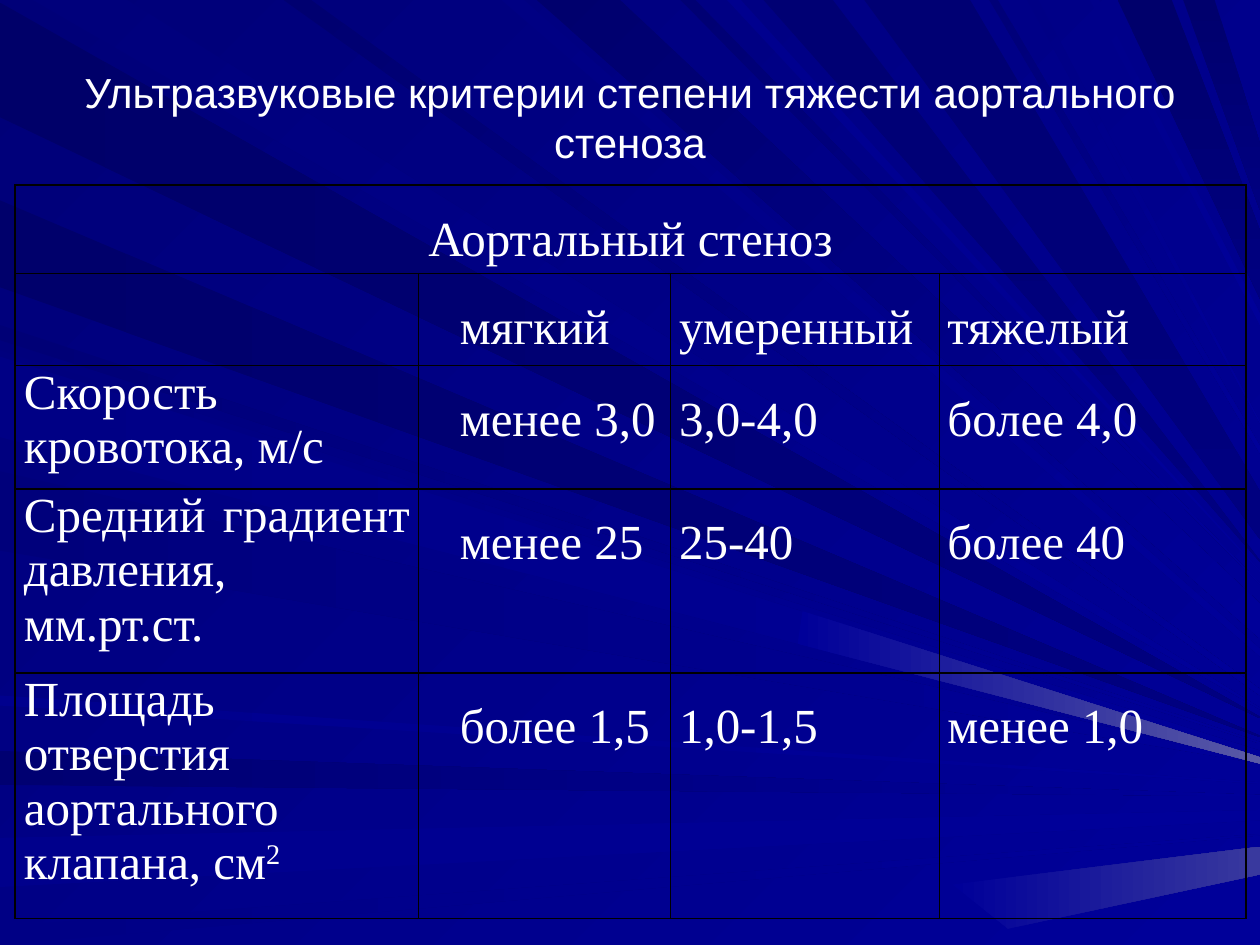
import pptx
import pptx.dml.color
import pptx.enum.text
import pptx.oxml
import pptx.oxml.ns
import pptx.util

ALIGN = pptx.enum.text.PP_ALIGN
GRID = 1000
DEEP, BRIGHT = "000080", "000099"


def color(value):
    return pptx.dml.color.RGBColor.from_string(value)


class Deck:
    title_font, body_font = "Arial", "Times New Roman"
    text, line = "FFFFFF", "000000"
    title_size, body_size = 24, 28

    def __init__(self):
        self.prs = pptx.Presentation()
        self.prs.slide_width = pptx.util.Inches(10)
        self.prs.slide_height = pptx.util.Inches(7.5)
        self.s = self.prs.slides.add_slide(self.prs.slide_layouts[6])
        self.unit = self.prs.slide_width // GRID

    def box(self, *lengths):
        return [pptx.util.Emu(n * self.unit) for n in lengths]

    def paint(self, fill, start, end, angle):
        fill.gradient()
        fill.gradient_angle = 360 - angle
        for stop, value in zip(fill.gradient_stops, (start, end)):
            stop.color.rgb = color(value)

    def background(self, start, end, angle):
        self.paint(self.s.background.fill, start, end, angle)

    def beam(self, points, start, end, angle=0):
        builder = self.s.shapes.build_freeform(*points[0], scale=self.unit)
        builder.add_line_segments(points[1:], close=True)
        sp = builder.convert_to_shape()
        sp.shadow.inherit = False
        sp.line.fill.background()
        self.paint(sp.fill, start, end, angle)

    def left_ray(self, top, bottom, tip, start, end=BRIGHT, spread=1):
        points = [(0, top), (0, bottom), (GRID, tip + spread), (GRID, tip)]
        self.beam(points, start, end)

    def top_ray(self, left, right, tip, start, end=BRIGHT, spread=1):
        points = [(left, 0), (right, 0), (GRID, tip), (GRID, tip + spread)]
        self.beam(points, start, end, 90 if end == DEEP else 45)

    def run(self, p, text, font, size, raised=False):
        r = p.add_run()
        r.text = text
        r.font.name = font
        r.font.size = pptx.util.Pt(size)
        r.font.color.rgb = color(self.text)
        if raised:
            r.font._element.set("baseline", "30000")

    def title(self, text, *place):
        tf = self.s.shapes.add_textbox(*self.box(*place)).text_frame
        tf.word_wrap = True
        tf.vertical_anchor = pptx.enum.text.MSO_ANCHOR.MIDDLE
        p = tf.paragraphs[0]
        p.alignment = ALIGN.CENTER
        self.run(p, text, self.title_font, self.title_size)

    def border(self, cell, side, width):
        ln = pptx.oxml.parse_xml(
            f'<a:{side} {pptx.oxml.ns.nsdecls("a")} w="{pptx.util.Pt(width)}"><a:solidFill>'
            f'<a:srgbClr val="{self.line}"/></a:solidFill></a:{side}>')
        cell._tc.get_or_add_tcPr().append(ln)

    def cell(self, cell, runs, row, col):
        cell.margin_left = cell.margin_right = pptx.util.Inches(0.07)
        cell.margin_top = cell.margin_bottom = 0
        strong = {"lnL": row == 0 or col == 0, "lnR": row == 0 or col == 3,
                  "lnT": row != 2, "lnB": row != 1}
        for side, bold in strong.items():
            self.border(cell, side, 1 if bold else 0.25)
        cell.fill.background()
        p = cell.text_frame.paragraphs[0]
        p.alignment = ALIGN.JUSTIFY if row else ALIGN.CENTER
        if col or not row:
            p.line_spacing = 1.5
        if col == 1:
            p._p.get_or_add_pPr().set("indent", str(pptx.util.Inches(0.26)))
        for i, text in enumerate(runs):
            self.run(p, text, self.body_font, self.body_size, raised=i == 1)

    def table(self, rows, left, top, widths, heights):
        place = self.box(left, top, sum(widths), sum(heights))
        table = self.s.shapes.add_table(len(rows), len(widths), *place).table
        table.first_row = table.horz_banding = False
        for column, width in zip(table.columns, self.box(*widths)):
            column.width = width
        for row, height in zip(table.rows, self.box(*heights)):
            row.height = height
        table.cell(0, 0).merge(table.cell(0, len(widths) - 1))
        for i, row in enumerate(rows):
            for j, runs in enumerate(row):
                self.cell(table.cell(i, j), runs, i, j)


LEFT_RAYS = [
    (2, 93, 569, "000069", DEEP),
    (596, 623, 631, "000071"),
    (665, 704, 643, "00008C", BRIGHT, 8),
    (735, 750, 662, "000085"),
    (258, 270, 589, "000076"),
    (159, 228, 584, "00006B", DEEP),
    (278, 342, 596, "00007E", BRIGHT, 6),
    (374, 437, 605, "00007B"),
    (552, 560, 621, "00008E"),
    (283, 347, 601, "000085", BRIGHT, 5),
]

TOP_RAYS = [
    (26, 101, 562, "00007B"),
    (398, 416, 515, "000083", BRIGHT, 6),
    (426, 492, 479, "00006D", BRIGHT, 28),
    (540, 552, 463, "000073"),
    (606, 661, 445, "000073", DEEP),
    (887, 930, 183, "00006B", DEEP, 54),
    (939, 964, 114, "00006D", DEEP, 53),
    (225, 247, 547, "000070", BRIGHT, 5),
    (577, 588, 453, "00008E"),
    (686, 770, 390, "000073", DEEP, 38),
    (785, 792, 354, "000078", BRIGHT, 6),
    (815, 824, 335, "000085"),
    (865, 872, 249, "00008A", BRIGHT, 9),
]

GLINTS = [
    ([(756, 702), (1000, 672), (1000, 694), (800, 737)], "39399E"),
    ([(637, 485), (633, 511), (1000, 606), (1000, 601)], "5A5AA6"),
]

CRITERIA = [
    [["Аортальный стеноз"], [], [], []],
    [[], ["мягкий"], ["умеренный"], ["тяжелый"]],
    [["Скорость кровотока, м/с"], ["менее 3,0"], ["3,0-4,0"], ["более 4,0"]],
    [["Средний градиент давления, мм.рт.ст."], ["менее 25"], ["25-40"], ["более 40"]],
    [["Площадь отверстия аортального клапана, см", "2"],
     ["более 1,5"], ["1,0-1,5"], ["менее 1,0"]],
]


def main():
    deck = Deck()
    deck.background("000078", BRIGHT, 45)
    for ray in LEFT_RAYS:
        deck.left_ray(*ray)
    for ray in TOP_RAYS:
        deck.top_ray(*ray)
    for points, glow in GLINTS:
        deck.beam(points, BRIGHT, glow)
    deck.title("Ультразвуковые критерии степени тяжести аортального стеноза", 50, 30, 900, 125)
    deck.table(CRITERIA, 12, 147, [320, 200, 213, 244], [70, 73, 98, 146, 195])
    deck.prs.save("out.pptx")


if __name__ == "__main__":
    main()
